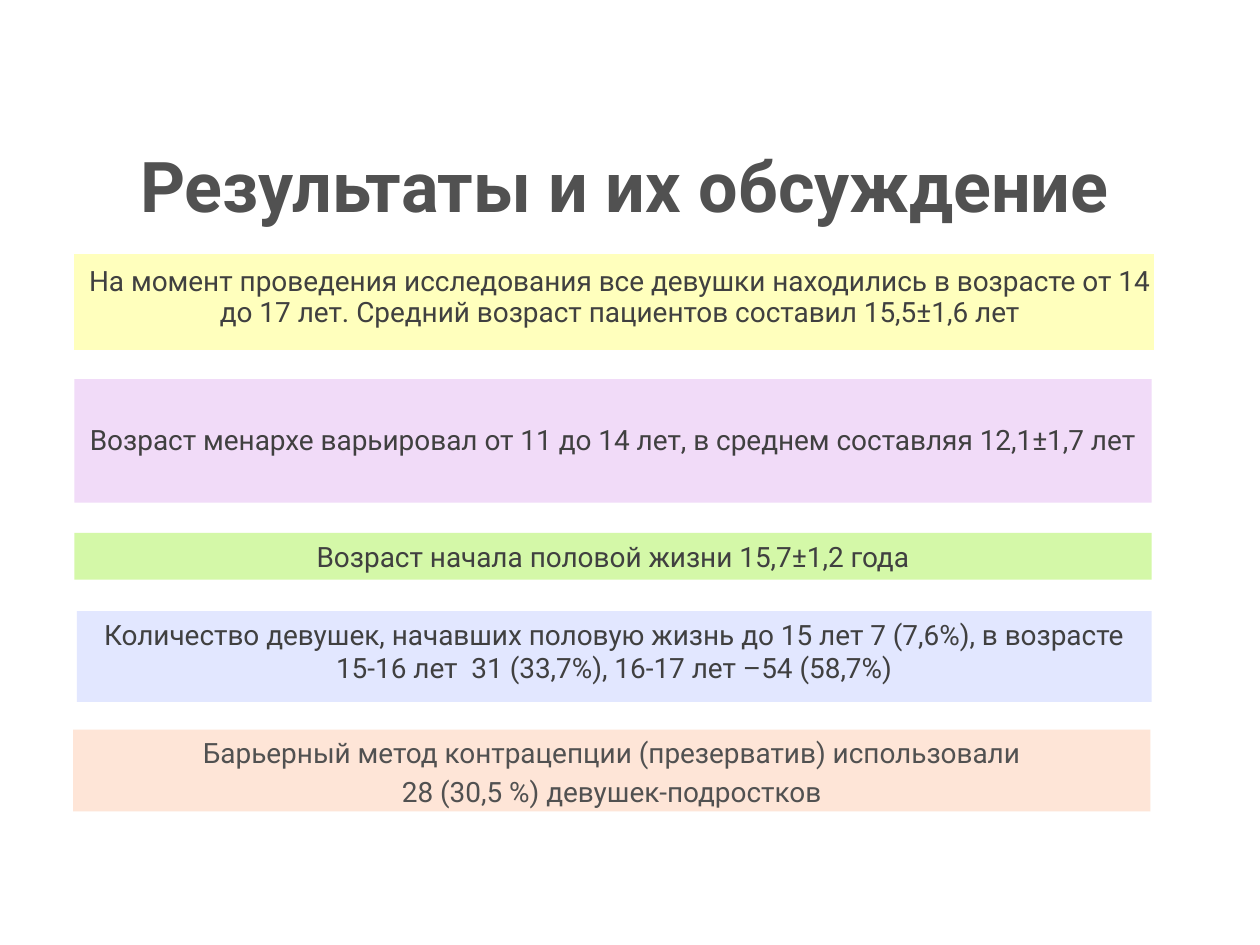
from dataclasses import dataclass

from lxml.etree import SubElement
from pptx import Presentation
from pptx.dml.color import RGBColor
from pptx.enum.shapes import MSO_SHAPE
from pptx.enum.text import MSO_ANCHOR, PP_ALIGN
from pptx.oxml.ns import qn
from pptx.util import Inches, Pt


@dataclass(frozen=True)
class Theme:
    font: str = "Roboto"
    title_size: int = 40
    text_size: int = 16
    heading: str = "515151"
    body: str = "404040"
    white: str = "FFFFFF"
    yellow: str = "FFFF00"
    violet: str = "DEAAF0"
    green: str = "C7F78D"
    blue: str = "BFCAFF"
    peach: str = "FDC5A4"


theme = Theme()


def format_text(text_frame, size, color, bold=False):
    text_frame.word_wrap = True
    for paragraph in text_frame.paragraphs:
        paragraph.alignment = PP_ALIGN.CENTER
        for run in paragraph.runs:
            run.font.name = theme.font
            run.font.size = Pt(size)
            run.font.bold = bold
            run.font.color.rgb = RGBColor.from_string(color)


def add_banner(slide, box, fill, opacity, text, color, anchor, insets, line_spacing):
    banner = slide.shapes.add_shape(MSO_SHAPE.RECTANGLE, *map(Inches, box))
    banner.shadow.inherit = False
    banner.line.fill.background()
    banner.fill.solid()
    banner.fill.fore_color.rgb = RGBColor.from_string(fill)
    fill_color = banner.fill._xPr.find(qn("a:solidFill"))[0]
    SubElement(fill_color, qn("a:alpha")).set("val", str(opacity * 1000))

    text_frame = banner.text_frame
    text_frame.text = text
    text_frame.vertical_anchor = anchor
    (text_frame.margin_left, text_frame.margin_top,
     text_frame.margin_right, text_frame.margin_bottom) = map(Inches, insets)
    format_text(text_frame, theme.text_size, color)
    for paragraph in text_frame.paragraphs:
        paragraph.line_spacing = line_spacing
    for paragraph in text_frame.paragraphs[1:]:
        paragraph.space_before = Pt(3.2)
    return banner


presentation = Presentation()
presentation.slide_width = Inches(10)
presentation.slide_height = Inches(7.5)
slide = presentation.slides.add_slide(presentation.slide_layouts[5])

# Title
title = slide.shapes.title
title.left, title.top = Inches(0.92), Inches(1.08)
title.width, title.height = Inches(8.07), Inches(0.77)
title.text_frame.text = "Результаты и их обсуждение"
title.text_frame.vertical_anchor = MSO_ANCHOR.MIDDLE
format_text(title.text_frame, theme.title_size, theme.heading, bold=True)

# Result banners: box, fill, opacity in percent, text, text colour,
# anchor, insets (left, top, right, bottom), line spacing
middle, top = MSO_ANCHOR.MIDDLE, MSO_ANCHOR.TOP
standard_insets = (0.1, 0.05, 0.1, 0.05)
banners = [
    ((0.57, 2, 8.6, 0.79), theme.yellow, 26,
     "На момент проведения исследования все девушки находились в возрасте от 14 "
     "до 17 лет. Средний возраст пациентов составил 15,5±1,6 лет",
     theme.body, middle, (0.12, 0.04, 0.02, 0.1), 0.9),
    ((0.59, 3.01, 8.55, 0.98), theme.violet, 42,
     "Возраст менархе варьировал от 11 до 14 лет, в среднем составляя 12,1±1,7 лет",
     theme.body, middle, (0.07, 0.07, 0.07, 0.07), 0.9),
    ((0.59, 4.23, 8.55, 0.37), theme.green, 76,
     "Возраст начала половой жизни 15,7±1,2 года",
     theme.body, top, standard_insets, 1.0),
    ((0.61, 4.85, 8.53, 0.72), theme.blue, 45,
     "Количество девушек, начавших половую жизнь до 15 лет 7 (7,6%), в возрасте "
     "15-16 лет  31 (33,7%), 16-17 лет –54 (58,7%)",
     theme.body, top, standard_insets, 1.0),
    ((0.58, 5.79, 8.55, 0.65), theme.peach, 43,
     "Барьерный метод контрацепции (презерватив) использовали\n"
     "28 (30,5 %) девушек-подростков",
     theme.heading, top, standard_insets, 1.0),
]
banner_shapes = [add_banner(slide, *banner) for banner in banners]

# White outline of the first banner
outline = banner_shapes[0].line
outline.color.rgb = RGBColor.from_string(theme.white)
outline.width = Pt(2)

presentation.save("out.pptx")
